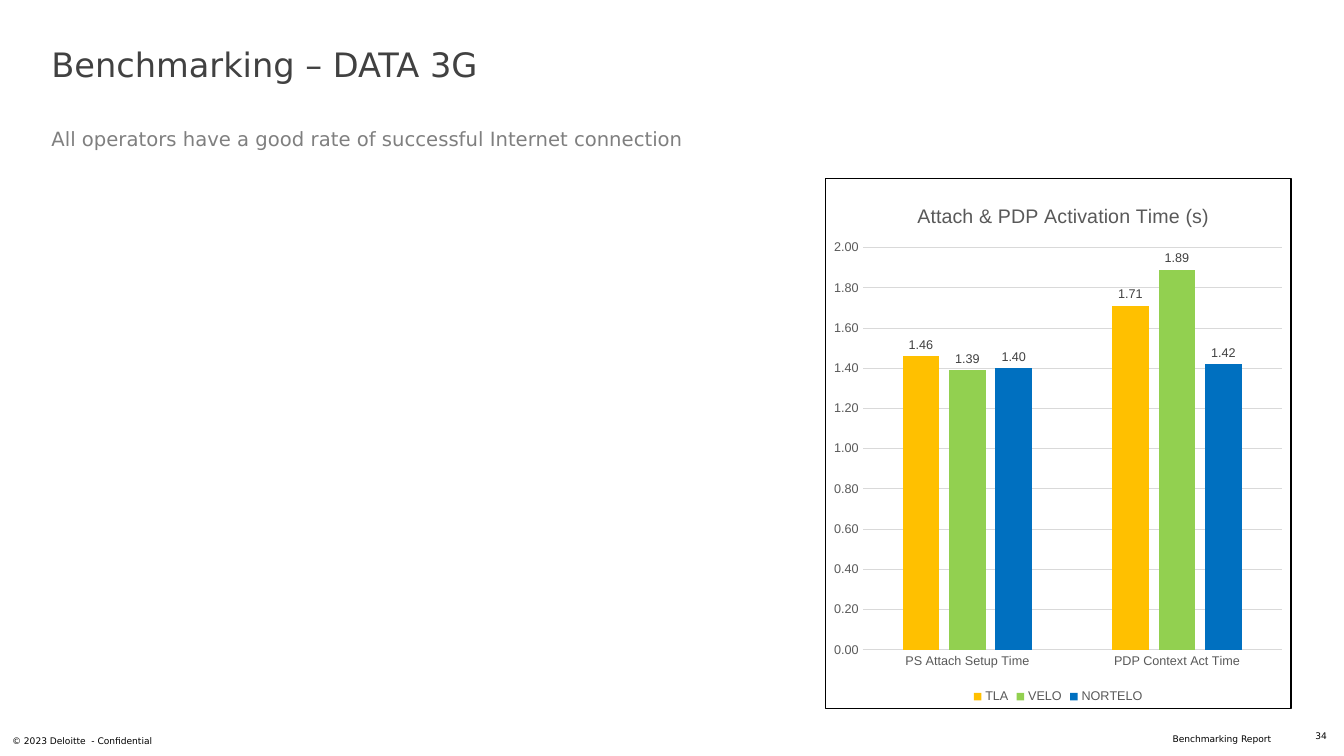
from dataclasses import dataclass

from lxml import etree
from pptx import Presentation
from pptx import util as u
from pptx.chart.data import CategoryChartData
from pptx.dml.color import RGBColor
from pptx.enum import chart as ch
from pptx.enum import text as t
from pptx.oxml import parse_xml
from pptx.oxml.ns import nsdecls, qn

COLORS = {
    "black": "000000", "white": "FFFFFF", "title": "414141", "subtitle": "7F7F7F",
    "axis": "595959", "label": "404040", "grid": "D9D9D9",
    "amber": "FFC000", "green": "92D050", "blue": "0070C0",
}


@dataclass
class Line:
    wording: str
    size: float
    color: str
    space_before: float = 0


@dataclass
class Block:
    left: float
    top: float
    width: float
    height: float
    lines: list[Line]
    align: t.PP_ALIGN = t.PP_ALIGN.LEFT


@dataclass
class Operator:
    name: str
    times: tuple[float, float]
    color: str


FOOTER_SIZE = 6.5
BLOCKS = [
    Block(0.51, 0.44, 12.31, 1.05, [
        Line("Benchmarking – DATA 3G", 24, "title"),
        Line("All operators have a good rate of successful Internet connection",
             14, "subtitle", 30),
    ]),
    Block(11.63, 7.28, 1.71, 0.11, [Line("Benchmarking Report", FOOTER_SIZE, "black")]),
    Block(12.82, 7.25, 0.34, 0.11, [Line("34", FOOTER_SIZE, "black")], t.PP_ALIGN.RIGHT),
    Block(0.12, 7.3, 4.5, 0.11,
          [Line("© 2023 Deloitte  - Confidential", FOOTER_SIZE, "black")]),
]
MEASURES = ["PS Attach Setup Time", "PDP Context Act Time"]
OPERATORS = [
    Operator("TLA", (1.46, 1.71), "amber"),
    Operator("VELO", (1.39, 1.89), "green"),
    Operator("NORTELO", (1.40, 1.42), "blue"),
]


def rgb(name: str) -> RGBColor:
    return RGBColor.from_string(COLORS[name])


def style_font(font, size: float, color: str, face: str = "Arial") -> None:
    font.size = u.Pt(size)
    font.name = face
    font.bold = False
    font.color.rgb = rgb(color)


def style_line(line, color: str) -> None:
    line.color.rgb = rgb(color)
    line.width = u.Pt(0.75)


def add_block(slide, block: Block) -> None:
    box = slide.shapes.add_textbox(*map(u.Inches, (block.left, block.top, block.width, block.height)))
    frame = box.text_frame
    frame.word_wrap = True
    frame.margin_left = frame.margin_right = frame.margin_top = frame.margin_bottom = 0
    frame.text = "\n".join(line.wording for line in block.lines)
    for paragraph, line in zip(frame.paragraphs, block.lines):
        paragraph.alignment = block.align
        if line.space_before:
            paragraph.space_before = u.Pt(line.space_before)
        style_font(paragraph.runs[0].font, line.size, line.color, "DejaVu Sans")


def place(parent, index: int, **position: float) -> None:
    for layout in parent.findall(qn("c:layout")):
        parent.remove(layout)
    layout = parse_xml(f'<c:layout {nsdecls("c")}><c:manualLayout/></c:layout>')
    values = {"xMode": "edge", "yMode": "edge", **position}
    if "w" in position:
        values = {"layoutTarget": "inner", **values}
    for tag, value in values.items():
        etree.SubElement(layout[0], qn(f"c:{tag}")).set("val", str(value))
    parent.insert(index, layout)


def add_frame(chart) -> None:
    frame = parse_xml(
        f'<c:spPr {nsdecls("c", "a")}>'
        f'<a:solidFill><a:srgbClr val="{COLORS["white"]}"/></a:solidFill>'
        f'<a:ln w="{u.Pt(0.75)}"><a:solidFill><a:srgbClr val="{COLORS["black"]}"/>'
        '</a:solidFill></a:ln></c:spPr>')
    chart.element.find(qn("c:chart")).addnext(frame)


def style_axes(chart) -> None:
    for axis in (chart.category_axis, chart.value_axis):
        axis.major_tick_mark = axis.minor_tick_mark = ch.XL_TICK_MARK.NONE
        style_font(axis.tick_labels.font, 9, "axis")
    style_line(chart.category_axis.format.line, "grid")
    seconds = chart.value_axis
    seconds.minimum_scale, seconds.maximum_scale, seconds.major_unit = 0, 2, 0.2
    seconds.format.line.fill.background()
    seconds.has_major_gridlines = True
    style_line(seconds.major_gridlines.format.line, "grid")
    seconds.tick_labels.number_format = "0.00"
    seconds.tick_labels.number_format_is_linked = False


def add_activation_chart(slide) -> None:
    data = CategoryChartData(number_format="0.00")
    data.categories = MEASURES
    for operator in OPERATORS:
        data.add_series(operator.name, operator.times)
    chart = slide.shapes.add_chart(
        ch.XL_CHART_TYPE.COLUMN_CLUSTERED,
        *map(u.Inches, (8.18, 1.77, 4.63, 5.26)), data).chart
    style_font(chart.font, 10, "black")
    add_frame(chart)

    chart.has_title = True
    heading = chart.chart_title.text_frame
    heading.text = "Attach & PDP Activation Time (s)"
    style_font(heading.paragraphs[0].runs[0].font, 14, "axis")
    chart.chart_title.include_in_layout = False
    place(chart.chart_title.format.line and chart.element.find(f'.//{qn("c:title")}'),
          1, x=0.19, y=0.04)
    place(chart.element.find(f'.//{qn("c:plotArea")}'), 0, x=0.08, y=0.13, w=0.9, h=0.76)

    chart.has_legend = True
    chart.legend.position = ch.XL_LEGEND_POSITION.BOTTOM
    chart.legend.include_in_layout = False
    style_font(chart.legend.font, 9, "axis")
    style_axes(chart)

    columns = chart.plots[0]
    columns.gap_width, columns.overlap = 219, -27
    columns.vary_by_categories = False
    for series, operator in zip(columns.series, OPERATORS):
        series.format.fill.solid()
        series.format.fill.fore_color.rgb = rgb(operator.color)
        series.invert_if_negative = False
        labels = series.data_labels
        labels.show_value = True
        labels.position = ch.XL_LABEL_POSITION.OUTSIDE_END
        labels.number_format = "0.00"
        labels.number_format_is_linked = False
        style_font(labels.font, 9, "label")


def main() -> None:
    deck = Presentation()
    deck.slide_width, deck.slide_height = u.Inches(13.33), u.Inches(7.5)
    slide = deck.slides.add_slide(deck.slide_layouts[6])
    for block in BLOCKS:
        add_block(slide, block)
    add_activation_chart(slide)
    deck.save("out.pptx")


if __name__ == "__main__":
    main()
